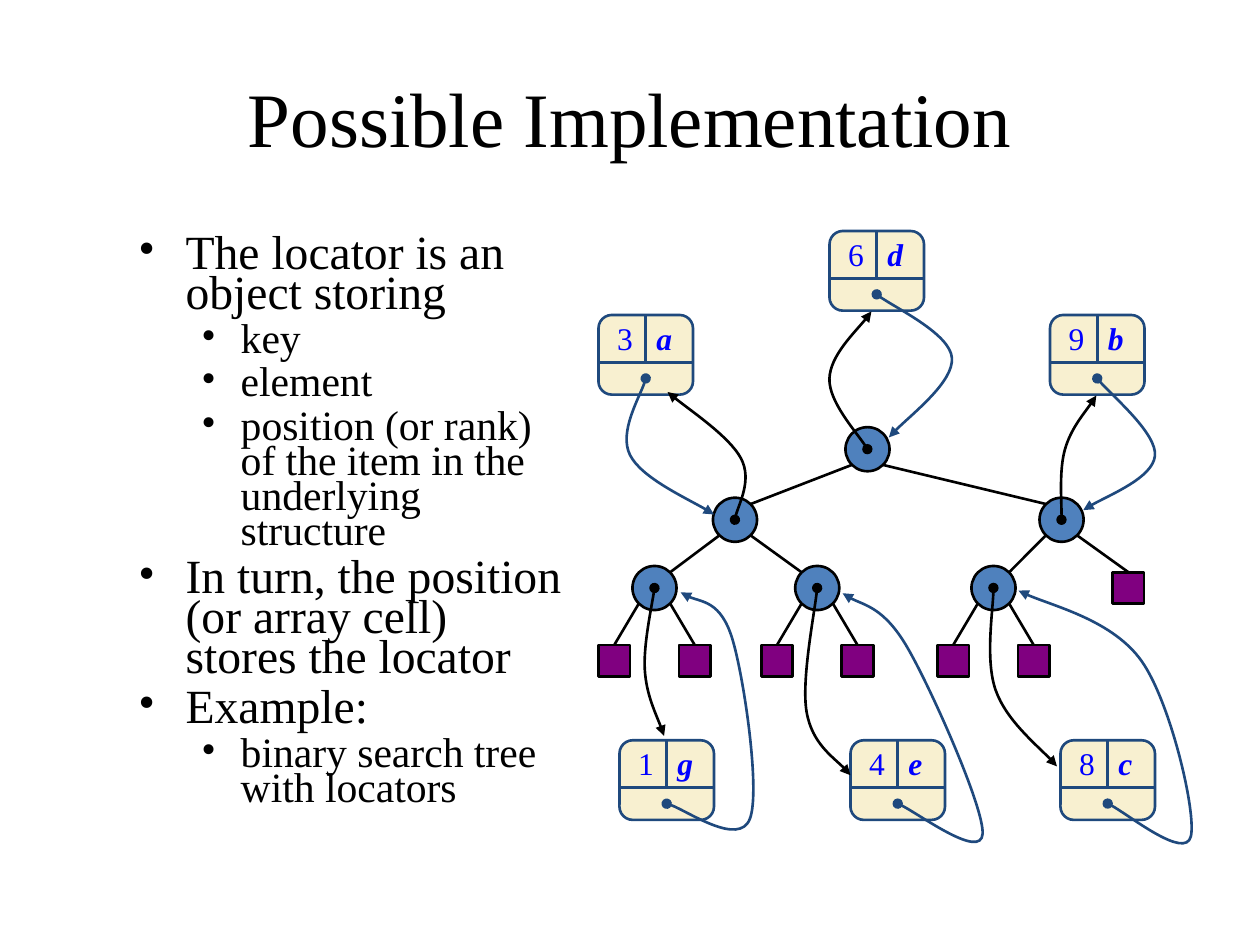
from dataclasses import dataclass

from pptx import Presentation
from pptx.dml.color import RGBColor
from pptx.enum import shapes, text
from pptx.oxml import ns, xmlchemy
from pptx.util import Pt

BLACK = RGBColor(0x00, 0x00, 0x00)
NAVY = RGBColor(0x1F, 0x49, 0x7D)
BLUE = RGBColor(0x4F, 0x81, 0xBD)
INK = RGBColor(0x00, 0x00, 0xFF)
CREAM = RGBColor(0xF8, 0xF0, 0xD0)
PURPLE = RGBColor(0x80, 0x00, 0x80)
FONT = "Times New Roman"

NODE, LEAF = 25.2, 18         # circle diameter, leaf side
DIAG = 9                      # from a circle's centre to its diagonal points
CARD_W, CARD_H, SPLIT = 54, 45.5, 27
POCKET = (SPLIT, (SPLIT + CARD_H) / 2)   # middle of a card's lower part

POINTS = [
    (0, "The locator is an object storing"),
    (1, "key"),
    (1, "element"),
    (1, "position (or rank) of the item in the underlying structure"),
    (0, "In turn, the position (or array cell) stores the locator"),
    (0, "Example:"),
    (1, "binary search tree with locators"),
]
LEVELS = [(27.2, 27, 27), (23.8, 58.5, 22.5)]   # text size, margin, hang


@dataclass
class Locator:
    """A card and its tree node; points are relative to the tree's box."""
    key: str
    item: str
    parent: str    # item of the parent node
    card: tuple    # top left corner
    node: tuple    # centre
    leaves: list   # offsets of leaf centres from the node
    down: list     # points the link from card to node passes, then its end
    back: list     # the same from node to card


PAIR = [(-23, 41.6), (23, 41.6)]
LOCATORS = [
    Locator("6", "d", "", (132, 0), (153.7, 124.7), [],
            [(202, 72.5), (166, 118)], [(132, 84.5), (156, 46)]),
    Locator("3", "a", "d", (0, 48), (78, 165), [],
            [(18, 128), (66, 162)], [(81.5, 130), (39.5, 92)]),
    Locator("9", "b", "d", (258, 48), (264.6, 165), [(38.2, 39)],
            [(318, 128.5), (277, 159.5)], [(266.5, 125), (284.5, 94)]),
    Locator("1", "g", "a", (12, 291), (32, 204), PAIR,
            [(86.5, 336), (76.5, 233), (47, 206.5)], [(26.5, 251), (37.5, 288.5)]),
    Locator("4", "e", "a", (144, 291), (125, 204), PAIR,
            [(219.5, 344.5), (176.5, 238), (139.5, 207)], [(119, 275), (144, 311)]),
    Locator("8", "c", "b", (264, 291), (225.7, 204), PAIR,
            [(338.5, 346), (310.5, 246), (240, 205.5)], [(227, 262.5), (262, 306)]),
]


def add(a, b):
    return a[0] + b[0], a[1] + b[1]


def make(parent, tag, name, value):
    """Append a new XML element with one attribute."""
    child = xmlchemy.OxmlElement(tag)
    child.set(name, value)
    parent.append(child)


def style(run, size, color):
    run.font.name, run.font.size = FONT, Pt(size)
    run.font.color.rgb = color


def stroke(shape, color):
    shape.line.color.rgb, shape.line.width = color, Pt(1.5)


def block(group, kind, box, fill, edge):
    shape = group.add_shape(kind, *map(Pt, box))
    shape.shadow.inherit = False
    shape.fill.solid()
    shape.fill.fore_color.rgb = fill
    stroke(shape, edge)
    return shape


def join(group, start, end, color):
    line = group.add_connector(shapes.MSO_CONNECTOR.STRAIGHT, *map(Pt, start + end))
    stroke(line, color)
    line._element.spPr.append(xmlchemy.OxmlElement("a:effectLst"))
    return line


def smooth(stops):
    """Bezier points of a curve through the stops.

    At each stop the curve runs parallel to the chord between its neighbours,
    and a control lies one sixth of that chord away.
    """
    padded = [stops[0], *stops, stops[-1]]
    arms = [((c[0] - a[0]) / 6, (c[1] - a[1]) / 6)
            for a, c in zip(padded, padded[2:])]
    points = [stops[0]]
    for i in range(1, len(stops)):
        x, y = arms[i]
        points += [add(stops[i - 1], arms[i - 1]), add(stops[i], (-x, -y)), stops[i]]
    return points


def link(slide, stops, color):
    points = [(Pt(x), Pt(y)) for x, y in smooth(stops)]
    form = slide.shapes.build_freeform(*points[0], scale=1.0)
    form.add_line_segments(points[1:], close=False)
    shape = form.convert_to_shape()
    shape.shadow.inherit = False
    shape.fill.background()
    stroke(shape, color)
    # Turn each three straight segments into one Bezier bend
    outline = shape._element.find(".//" + ns.qn("a:path"))
    steps = outline.findall(ns.qn("a:lnTo"))
    for i in range(0, len(steps), 3):
        bend = xmlchemy.OxmlElement("a:cubicBezTo")
        outline.append(bend)
        for step in steps[i:i + 3]:
            bend.append(step[0])
            outline.remove(step)
    # Dot at the start, arrowhead at the end
    ln = shape._element.spPr.find(ns.qn("a:ln"))
    make(ln, "a:headEnd", "type", "oval")
    make(ln, "a:tailEnd", "type", "triangle")


def title(slide, box):
    head = slide.shapes.title
    head.left, head.top, head.width, head.height = map(Pt, box)
    frame = head.text_frame
    frame.text = "Possible Implementation"
    frame.vertical_anchor = text.MSO_ANCHOR.MIDDLE
    frame.paragraphs[0].alignment = text.PP_ALIGN.CENTER
    style(frame.paragraphs[0].runs[0], 44, BLACK)


def bullets(slide, box):
    frame = slide.shapes.add_textbox(*map(Pt, box)).text_frame
    frame.word_wrap = True
    frame.text = "\n".join(words for _, words in POINTS)
    for para, (level, _) in zip(frame.paragraphs, POINTS):
        size, margin, hang = LEVELS[level]
        para.level = level
        para.line_spacing = 0.7
        para.space_before = Pt(size * 0.2)
        style(para.runs[0], size, BLACK)
        props = para._p.get_or_add_pPr()
        props.set("marL", str(Pt(margin)))
        props.set("indent", str(-Pt(hang)))
        make(props, "a:buFont", "typeface", FONT)
        make(props, "a:buChar", "char", "•")


def card(slide, key, item, corner):
    x, y = corner
    group = slide.shapes.add_group_shape().shapes
    block(group, shapes.MSO_SHAPE.ROUNDED_RECTANGLE, (x, y, CARD_W, CARD_H), CREAM, NAVY)
    join(group, (x, y + SPLIT), (x + CARD_W, y + SPLIT), NAVY)
    join(group, (x + SPLIT, y), (x + SPLIT, y + SPLIT), NAVY)
    for words, dx, width, strong in ((key, 3.6, 24.5, False), (item, 26, 31.5, True)):
        label = slide.shapes.add_textbox(*map(Pt, (x + dx, y - 1.4, width, 30.5)))
        frame = label.text_frame
        frame.word_wrap = False
        frame.text = words
        run = frame.paragraphs[0].runs[0]
        style(run, 18, INK)
        run.font.bold = run.font.italic = strong


def tree(slide, box):
    origin, parts = box[:2], slide.shapes
    nodes = {loc.item: add(origin, loc.node) for loc in LOCATORS}
    for loc in LOCATORS:
        x, y = node = nodes[loc.item]
        block(parts, shapes.MSO_SHAPE.OVAL, (x - NODE / 2, y - NODE / 2, NODE, NODE), BLUE, BLACK)
        # Edge from the parent
        if loc.parent:
            top = nodes[loc.parent]
            side = DIAG if x > top[0] else -DIAG
            join(parts, add(top, (side, DIAG)), add(node, (-side, -DIAG)), BLACK)
        # Leaves, joined at the middle of their top side
        for shift in loc.leaves:
            lx, ly = add(add(node, shift), (0, -LEAF / 2))
            leaf = block(parts, shapes.MSO_SHAPE.RECTANGLE,
                         (lx - LEAF / 2, ly, LEAF, LEAF), PURPLE, BLACK)
            side = DIAG if lx > x else -DIAG
            join(parts, add(node, (side, DIAG)), (lx, ly), BLACK).end_connect(leaf, 0)
    # Cards, and the links both ways
    for loc in LOCATORS:
        card(slide, loc.key, loc.item, add(origin, loc.card))
        for stops, color in (([add(loc.card, POCKET), *loc.down], NAVY),
                             ([loc.node, *loc.back], BLACK)):
            link(slide, [add(origin, stop) for stop in stops], color)


def main():
    deck = Presentation()
    deck.slide_width, deck.slide_height = Pt(720), Pt(540)
    slide = deck.slides.add_slide(deck.slide_layouts[5])
    title(slide, (36, 21.6, 648, 90))
    bullets(slide, (72, 132, 258, 360))
    tree(slide, (342, 132, 342, 360))
    deck.save("out.pptx")


if __name__ == "__main__":
    main()
